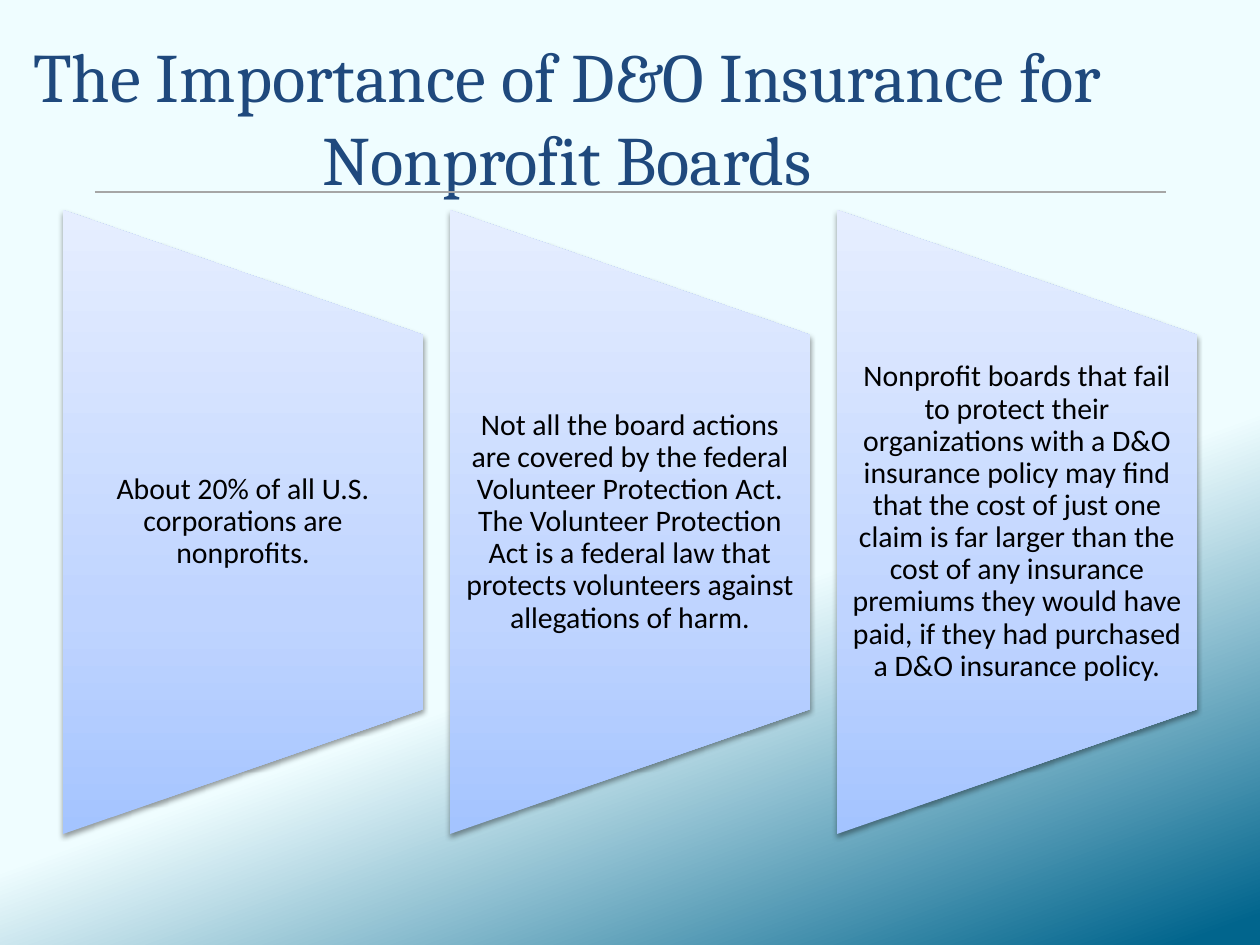
from lxml import etree
from pptx import Presentation, util as u
from pptx.dml.color import RGBColor
from pptx.enum import shapes, text
from pptx.oxml.ns import qn

NAVY = RGBColor(0x1F, 0x49, 0x7D)
BLACK = RGBColor(0, 0, 0)
GRAY = RGBColor(0xA6, 0xA6, 0xA6)
TEAL = RGBColor(0x01, 0x65, 0x8D)
ICE = RGBColor(0xEF, 0xFD, 0xFF)
BLUE = RGBColor(0xA4, 0xC4, 0xFF)
LIGHT_BLUE = RGBColor(0xBF, 0xD4, 0xFF)
PALE_BLUE = RGBColor(0xE6, 0xEE, 0xFF)

TITLE = "The Importance of D&O Insurance for Nonprofit Boards"
REASONS = [
    "About 20% of all U.S. corporations are nonprofits.",
    "Not all the board actions are covered by the federal Volunteer Protection Act. "
    "The Volunteer Protection Act is a federal law that protects volunteers against "
    "allegations of harm.",
    "Nonprofit boards that fail to protect their organizations with a D&O insurance "
    "policy may find that the cost of just one claim is far larger than the cost of "
    "any insurance premiums they would have paid, if they had purchased a D&O "
    "insurance policy.",
]

PANEL_LEFT, PANEL_TOP, PANEL_WIDTH, PANEL_HEIGHT = 63, 210, 360, 624
PANEL_PITCH = 387
REASON_TOP, REASON_HEIGHT, REASON_INSET = 335, 374, 15


def px(length):
    return u.Emu(round(length * 914400 / 126))


def box(*lengths):
    return [px(length) for length in lengths]


def set_gradient(fill, owner, stops, angle):
    fill.gradient()
    fill.gradient_angle = angle
    gradient = next(owner.iter(qn("a:gradFill")))
    gradient.set("rotWithShape", "0")
    stop_list = gradient.find(qn("a:gsLst"))
    for old_stop in list(stop_list):
        stop_list.remove(old_stop)
    for position, color in stops:
        stop = etree.SubElement(stop_list, qn("a:gs"), pos=str(position * 1000))
        etree.SubElement(stop, qn("a:srgbClr"), val=str(color))


def add_effects(shape):
    return etree.SubElement(shape.element.spPr, qn("a:effectLst"))


def add_soft_shadow(shape):
    shadow = etree.SubElement(
        add_effects(shape), qn("a:outerShdw"),
        blurRad="40000", dist="20000", dir="5400000", rotWithShape="0")
    color = etree.SubElement(shadow, qn("a:srgbClr"), val=str(BLACK))
    etree.SubElement(color, qn("a:alpha"), val="38000")


def write(frame, wording, font_name, size, color):
    frame.text = wording
    frame.word_wrap = True
    frame.auto_size = text.MSO_AUTO_SIZE.NONE
    frame.vertical_anchor = text.MSO_ANCHOR.MIDDLE
    paragraph = frame.paragraphs[0]
    paragraph.alignment = text.PP_ALIGN.CENTER
    font = paragraph.runs[0].font
    font.name, font.size, font.color.rgb = font_name, u.Pt(size), color
    return paragraph


def add_title(slide):
    title = slide.shapes.title
    title.left, title.top, title.width, title.height = box(0, 38, 1134, 157)
    write(title.text_frame, TITLE, "Cambria", 39.6, NAVY)


def add_panel(slide, left):
    turned_left = left + (PANEL_WIDTH - PANEL_HEIGHT) / 2
    turned_top = PANEL_TOP + (PANEL_HEIGHT - PANEL_WIDTH) / 2
    panel = slide.shapes.add_shape(
        shapes.MSO_SHAPE.FLOWCHART_MANUAL_OPERATION,
        *box(turned_left, turned_top, PANEL_HEIGHT, PANEL_WIDTH))
    panel.rotation = 270
    set_gradient(panel.fill, panel.element,
                 [(0, BLUE), (35, LIGHT_BLUE), (100, PALE_BLUE)], 90)
    panel.line.fill.background()
    add_soft_shadow(panel)


def add_reason(slide, left, wording):
    reason = slide.shapes.add_textbox(*box(left, REASON_TOP, PANEL_WIDTH, REASON_HEIGHT))
    frame = reason.text_frame
    frame.margin_left = frame.margin_right = px(REASON_INSET)
    frame.margin_top = frame.margin_bottom = 0
    write(frame, wording, "Calibri", 17, BLACK).line_spacing = 0.9


def add_rule(slide):
    rule = slide.shapes.add_connector(
        shapes.MSO_CONNECTOR.STRAIGHT, *box(95, 192, 1166, 192))
    rule.line.color.rgb = GRAY
    rule.line.width = u.Pt(1.5)
    add_effects(rule)


def main():
    deck = Presentation()
    deck.slide_width, deck.slide_height = box(1260, 945)
    slide = deck.slides.add_slide(deck.slide_layouts.get_by_name("Title Only"))
    set_gradient(slide.background.fill, slide.element, [(2, TEAL), (38, ICE)], 110)
    add_title(slide)
    for column, wording in enumerate(REASONS):
        left = PANEL_LEFT + column * PANEL_PITCH
        add_panel(slide, left)
        add_reason(slide, left, wording)
    add_rule(slide)
    deck.save("out.pptx")


if __name__ == "__main__":
    main()
